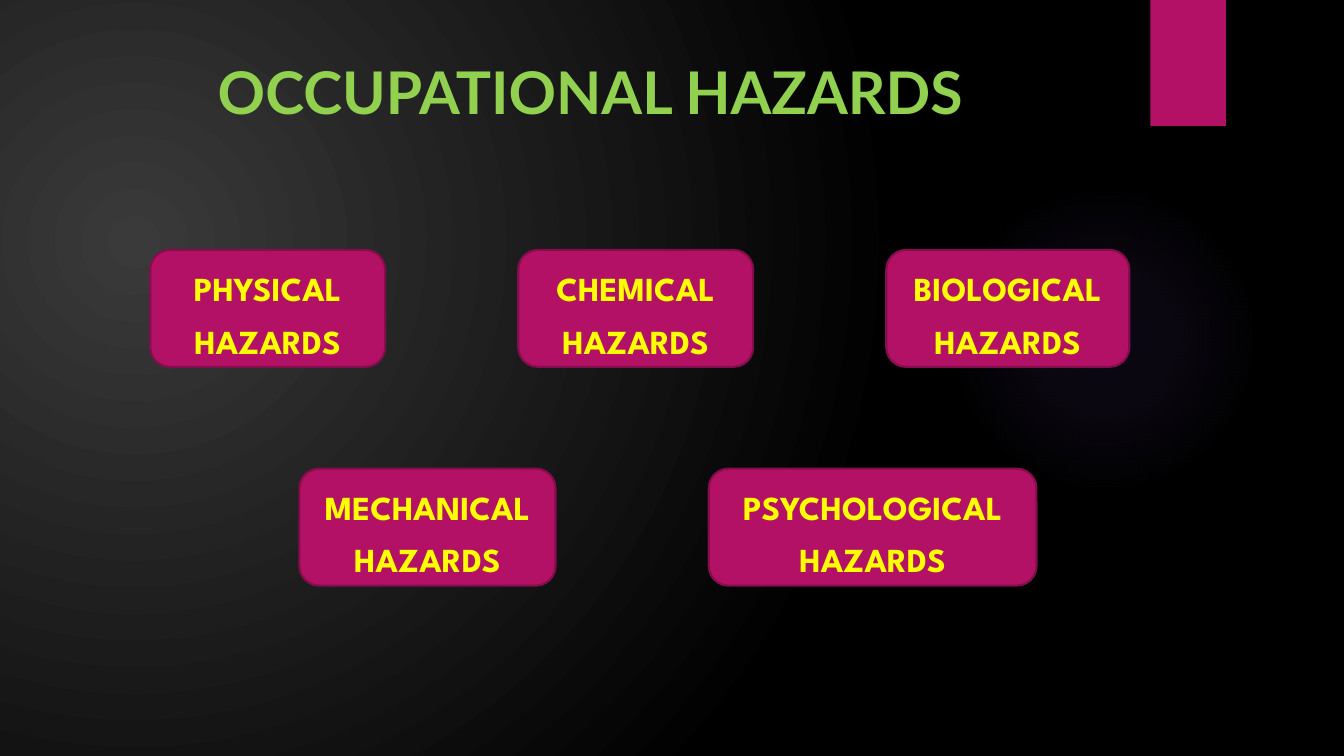
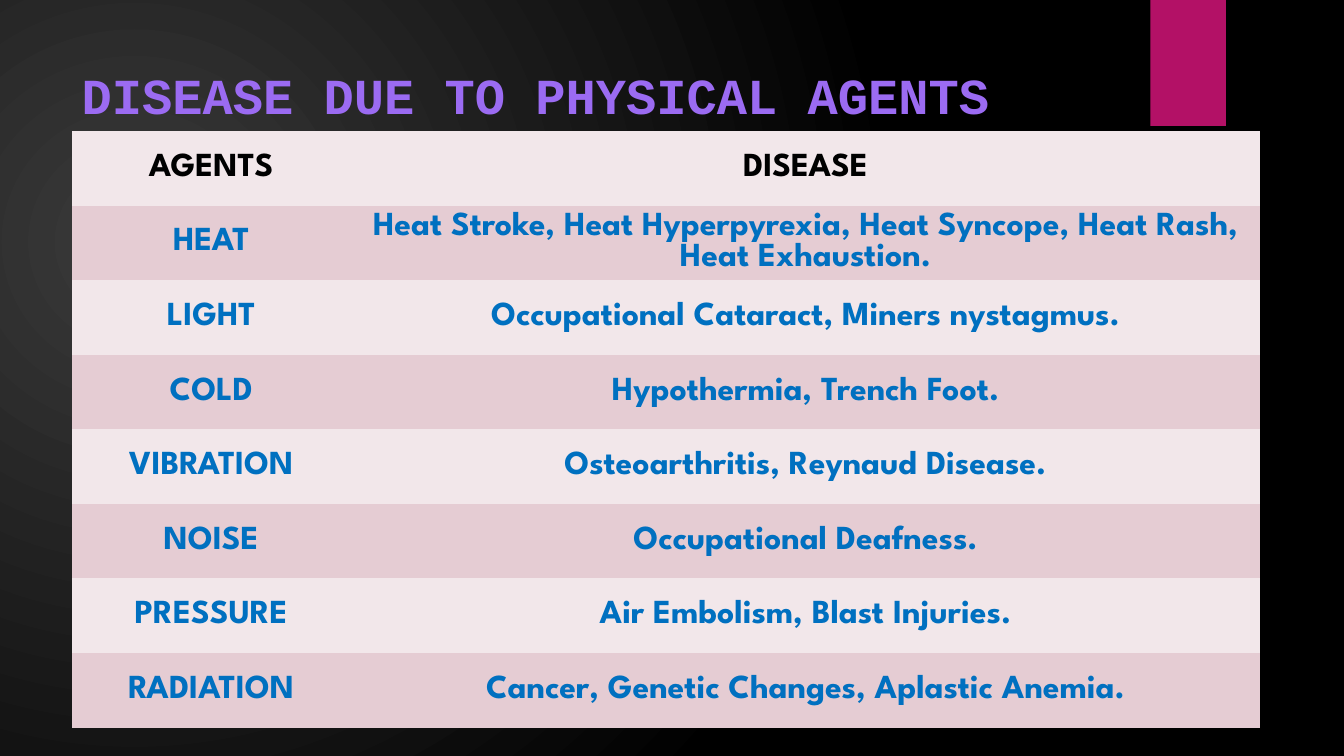
from lxml.etree import SubElement
from pptx import Presentation
from pptx.dml.color import RGBColor
from pptx.enum.shapes import MSO_SHAPE
from pptx.enum.text import MSO_ANCHOR, MSO_AUTO_SIZE, PP_ALIGN
from pptx.oxml.ns import qn
from pptx.util import Inches, Pt

CHARCOAL = RGBColor(0x3A, 0x3A, 0x3A)
BLACK = RGBColor(0x00, 0x00, 0x00)
MAGENTA = RGBColor(0xB3, 0x11, 0x66)
DARK_MAGENTA = RGBColor(0x84, 0x0D, 0x4B)
VIOLET = RGBColor(0x9B, 0x6B, 0xF2)
GREEN = RGBColor(0x92, 0xD0, 0x50)
YELLOW = RGBColor(0xFF, 0xFF, 0x00)
BLUE = RGBColor(0x00, 0x70, 0xC0)
PALE_ROSE = RGBColor(0xF2, 0xE7, 0xEA)
ROSE = RGBColor(0xE5, 0xCC, 0xD3)

BODY_FONT = "League Spartan"
BODY_SIZE = 24
LEFT_MARGIN = 0.71
NO_GRID_STYLE = "{2D5ABB26-0587-4C30-8999-92F81FD0307C}"

HAZARD_HEIGHT = 1.16
HAZARD_ROWS = [
    (2.48, [("PHYSICAL HAZARDS", 1.49, 2.33),
            ("CHEMICAL HAZARDS", 5.14, 2.33),
            ("BIOLOGICAL HAZARDS", 8.79, 2.41)]),
    (4.65, [("MECHANICAL HAZARDS", 2.97, 2.54),
            ("PSYCHOLOGICAL HAZARDS", 7.03, 3.25)]),
]

DISEASE_ROWS = [
    ("AGENTS", "DISEASE"),
    ("HEAT", "Heat Stroke, Heat Hyperpyrexia, Heat Syncope, Heat Rash, Heat Exhaustion."),
    ("LIGHT", "Occupational Cataract, Miners nystagmus."),
    ("COLD", "Hypothermia, Trench Foot."),
    ("VIBRATION", "Osteoarthritis, Reynaud Disease."),
    ("NOISE", "Occupational Deafness."),
    ("PRESSURE", "Air Embolism, Blast Injuries."),
    ("RADIATION", "Cancer, Genetic Changes, Aplastic Anemia."),
]


def set_radial_gradient(owner, stops, focus):
    owner.fill.gradient()
    element = getattr(owner, "element", None)
    if element is None:
        element = owner
    return element, stops, focus


def apply_radial_gradient(fill, root, stops, focus):
    fill.gradient()
    gradient = next(root.iter(qn("a:gradFill")))
    for child in list(gradient):
        gradient.remove(child)
    stop_list = SubElement(gradient, qn("a:gsLst"))
    for position, color, opacity in stops:
        stop = SubElement(stop_list, qn("a:gs"), pos=str(position * 1000))
        color_element = SubElement(stop, qn("a:srgbClr"), val=str(color))
        if opacity < 100:
            SubElement(color_element, qn("a:alpha"), val=str(opacity * 1000))
    circle = SubElement(gradient, qn("a:path"), path="circle")
    edges = {edge: str(value * 1000) for edge, value in zip("ltrb", focus)}
    SubElement(circle, qn("a:fillToRect"), **edges)


def format_text(text_frame, font_name, size, color, alignment=PP_ALIGN.CENTER):
    for paragraph in text_frame.paragraphs:
        paragraph.alignment = alignment
        for run in paragraph.runs:
            run.font.name = font_name
            run.font.size = Pt(size)
            run.font.bold = True
            run.font.color.rgb = color


def add_plain_shape(slide, kind, left, top, width, height):
    shape = slide.shapes.add_shape(
        kind, Inches(left), Inches(top), Inches(width), Inches(height))
    shape.shadow.inherit = False
    shape.line.fill.background()
    return shape


def add_decoration(slide):
    glow = add_plain_shape(slide, MSO_SHAPE.OVAL, 9.41, 1.83, 3.08, 3.08)
    glow_stops = [(0, VIOLET, 7), (36, VIOLET, 6), (69, VIOLET, 0)]
    apply_radial_gradient(glow.fill, glow.element, glow_stops, (50, 50, 50, 50))
    ribbon = add_plain_shape(slide, MSO_SHAPE.RECTANGLE, 11.41, 0, 0.75, 1.25)
    ribbon.fill.solid()
    ribbon.fill.fore_color.rgb = MAGENTA


def add_titled_slide(presentation, text, height, font_name, size, color,
                     alignment, top_inset=0.05):
    slide = presentation.slides.add_slide(presentation.slide_layouts[5])
    add_decoration(slide)
    title = slide.shapes.title
    title.left, title.top = Inches(LEFT_MARGIN), Inches(0.5)
    title.width, title.height = Inches(10.29), Inches(height)
    text_frame = title.text_frame
    text_frame.text = text
    text_frame.word_wrap = True
    text_frame.auto_size = MSO_AUTO_SIZE.NONE
    text_frame.vertical_anchor = MSO_ANCHOR.TOP
    text_frame.margin_top = Inches(top_inset)
    format_text(text_frame, font_name, size, color, alignment)
    return slide


def add_hazard_box(slide, text, left, top, width, height):
    box = add_plain_shape(slide, MSO_SHAPE.ROUNDED_RECTANGLE, left, top, width, height)
    box.fill.solid()
    box.fill.fore_color.rgb = MAGENTA
    box.line.color.rgb = DARK_MAGENTA
    box.line.width = Pt(1.5)
    text_frame = box.text_frame
    text_frame.text = text
    text_frame.word_wrap = True
    text_frame.vertical_anchor = MSO_ANCHOR.MIDDLE
    text_frame.paragraphs[0].line_spacing = 1.3
    format_text(text_frame, BODY_FONT, BODY_SIZE, YELLOW)


def add_disease_table(slide, left, top, column_widths, row_height):
    frame = slide.shapes.add_table(
        len(DISEASE_ROWS), len(column_widths), Inches(left), Inches(top),
        Inches(sum(column_widths)), Inches(row_height * len(DISEASE_ROWS)))
    table = frame.table
    next(frame.element.iter(qn("a:tableStyleId"))).text = NO_GRID_STYLE
    for column, width in zip(table.columns, column_widths):
        column.width = Inches(width)
    for row_index, (row, texts) in enumerate(zip(table.rows, DISEASE_ROWS)):
        row.height = Inches(row_height)
        for cell, text in zip(row.cells, texts):
            cell.text_frame.text = text
            cell.vertical_anchor = MSO_ANCHOR.MIDDLE
            cell.fill.solid()
            cell.fill.fore_color.rgb = ROSE if row_index % 2 else PALE_ROSE
            format_text(cell.text_frame, BODY_FONT, BODY_SIZE,
                        BLUE if row_index else BLACK)


def build_hazards_slide(presentation):
    slide = add_titled_slide(presentation, "OCCUPATIONAL HAZARDS", 1.13,
                             "Lato", 42, GREEN, PP_ALIGN.CENTER)
    for top, boxes in HAZARD_ROWS:
        for text, left, width in boxes:
            add_hazard_box(slide, text, left, top, width, HAZARD_HEIGHT)


def build_diseases_slide(presentation):
    slide = add_titled_slide(presentation, "DISEASE DUE TO PHYSICAL AGENTS", 0.95,
                             "Courier New", 36, VIOLET, PP_ALIGN.LEFT, 0.14)
    add_disease_table(slide, LEFT_MARGIN, 1.3, (2.77, 9.02), 0.74)


def main():
    presentation = Presentation()
    presentation.slide_width = Inches(13.33)
    presentation.slide_height = Inches(7.5)
    master = presentation.slide_master
    apply_radial_gradient(master.background.fill, master.element,
                          [(0, CHARCOAL, 100), (100, BLACK, 100)], (45, 65, 125, 100))
    build_hazards_slide(presentation)
    build_diseases_slide(presentation)
    presentation.save("out.pptx")


if __name__ == "__main__":
    main()
